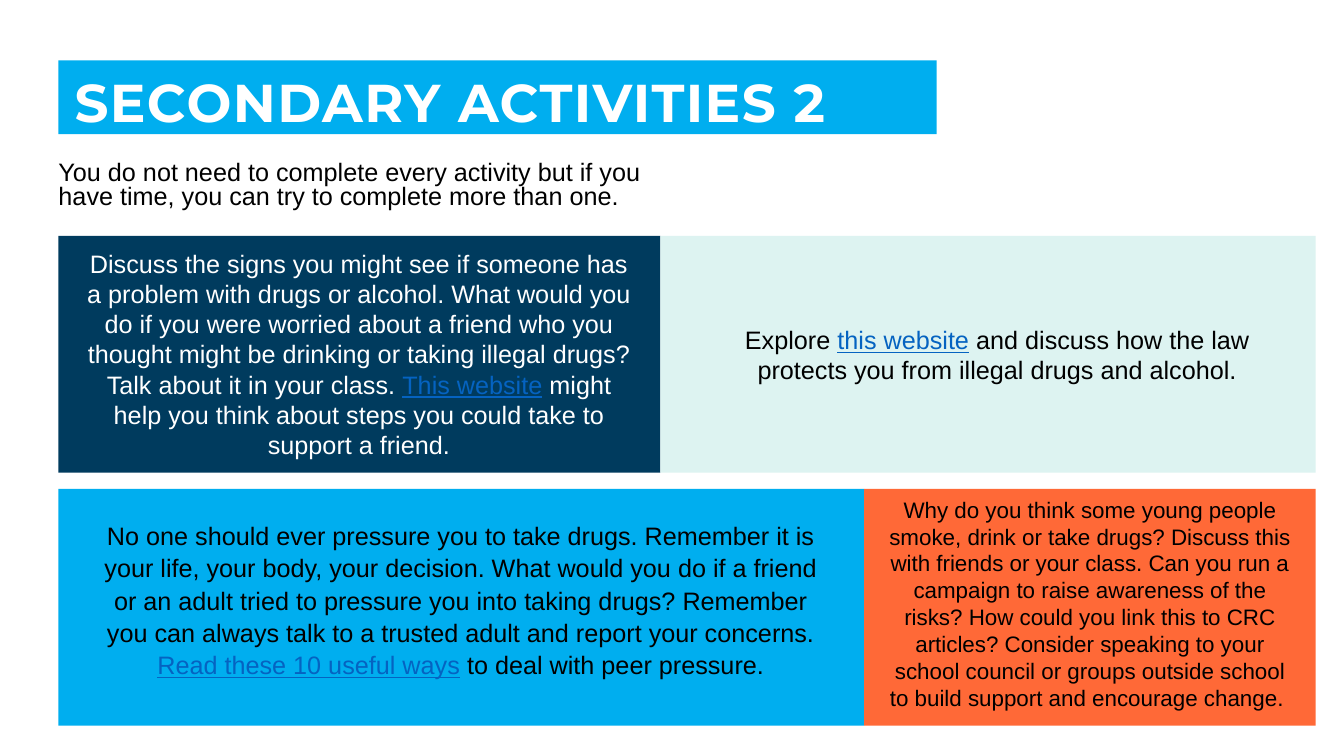
from pptx import Presentation, util as u
from pptx.dml.color import RGBColor
from pptx.enum import shapes, text

BLACK = RGBColor(0, 0, 0)
WHITE = RGBColor(0xFF, 0xFF, 0xFF)
NAVY = RGBColor(0x00, 0x3B, 0x5E)
SKY = RGBColor(0x00, 0xAE, 0xEF)
MINT = RGBColor(0xDD, 0xF3, 0xF1)
ORANGE = RGBColor(0xFF, 0x69, 0x37)
LINK = RGBColor(0x05, 0x63, 0xC1)

TITLE = "SECONDARY ACTIVITIES 2"
INTRO = ("You do not need to complete every activity but if you have time, "
         "you can try to complete more than one.")
ACTIVITIES = [
    dict(row=0, width=5.97, fill=NAVY, color=WHITE, size=18, box=(0.12, 0.07, 5.72, 2.22),
         parts=["Discuss the signs you might see if someone has a problem with drugs or alcohol. "
                "What would you do if you were worried about a friend who you thought might be "
                "drinking or taking illegal drugs? Talk about it in your class. ",
                "This website",
                " might help you think about steps you could take to support a friend."]),
    dict(row=0, width=6.5, fill=MINT, color=BLACK, size=18, box=(0.39, 0.83, 5.9, 0.71),
         parts=["Explore ", "this website",
                " and discuss how the law protects you from illegal drugs and alcohol."]),
    dict(row=1, width=7.99, fill=SKY, color=BLACK, size=18, box=(0.24, 0.24, 7.5, 1.71),
         spacing=1.07,
         parts=["No one should ever pressure you to take drugs. Remember it is your life, your body, "
                "your decision. What would you do if a friend or an adult tried to pressure you into "
                "taking drugs? Remember you can always talk to a trusted adult and report your "
                "concerns. ",
                "Read these 10 useful ways", " to deal with peer pressure."]),
    dict(row=1, width=4.48, fill=ORANGE, color=BLACK, size=16, box=(0.12, 0.02, 4.24, 2.26),
         parts=["Why do you think some young people smoke, drink or take drugs? Discuss this with "
                "friends or your class. Can you run a campaign to raise awareness of the risks? "
                "How could you link this to CRC articles? Consider speaking to your school council "
                "or groups outside school to build support and encourage change.\u00a0"]),
]

LEFT, TOP, CARD_H, GAP = 0.58, 2.34, 2.35, 0.16


def inches(*values):
    return [u.Inches(v) for v in values]


def style(r, size, color, name="Arial"):
    r.font.name = name
    r.font.size = u.Pt(size)
    r.font.color.rgb = color


def set_frame(tf, margins, anchor=text.MSO_ANCHOR.TOP):
    tf.word_wrap = True
    tf.auto_size = text.MSO_AUTO_SIZE.NONE
    tf.vertical_anchor = anchor
    tf.margin_left, tf.margin_top, tf.margin_right, tf.margin_bottom = inches(*margins)


def add_title(s):
    sp = s.shapes.title
    sp.left, sp.top, sp.width, sp.height = inches(LEFT, 0.6, 8.71, 0.73)
    sp.fill.solid()
    sp.fill.fore_color.rgb = SKY
    tf = sp.text_frame
    tf.text = TITLE
    set_frame(tf, (0.16, 0.16, 0.12, 0), text.MSO_ANCHOR.MIDDLE)
    p = tf.paragraphs[0]
    p.alignment = text.PP_ALIGN.LEFT
    p.line_spacing = 0.9
    r = p.runs[0]
    style(r, 38, WHITE, "Montserrat")
    r.font.bold = True
    r.font._element.set("spc", "100")


def add_intro(s):
    tf = s.shapes.add_textbox(*inches(LEFT, 1.56, 6.21, 0.62)).text_frame
    tf.text = INTRO
    set_frame(tf, (0, 0.05, 0.1, 0.05))
    p = tf.paragraphs[0]
    p.line_spacing = 0.8
    style(p.runs[0], 18, BLACK)


def add_activity(s, item, x, y):
    sp = s.shapes.add_shape(shapes.MSO_SHAPE.RECTANGLE, *inches(x, y, item["width"], CARD_H))
    sp.shadow.inherit = False
    sp.fill.solid()
    sp.fill.fore_color.rgb = item["fill"]
    sp.line.fill.background()

    dx, dy, w, h = item["box"]
    tf = s.shapes.add_textbox(*inches(x + dx, y + dy, w, h)).text_frame
    set_frame(tf, (0.1, 0.05, 0.1, 0.05))
    p = tf.paragraphs[0]
    p.alignment = text.PP_ALIGN.CENTER
    p.line_spacing = item.get("spacing", 1.0)
    for i, part in enumerate(item["parts"]):
        is_link = i == 1
        r = p.add_run()
        r.text = part
        style(r, item["size"], LINK if is_link else item["color"])
        r.font.underline = is_link


def main():
    prs = Presentation()
    prs.slide_width, prs.slide_height = inches(13.33, 7.5)
    s = prs.slides.add_slide(prs.slide_layouts[5])
    add_title(s)
    add_intro(s)
    row_x = [LEFT, LEFT]
    for item in ACTIVITIES:
        row = item["row"]
        add_activity(s, item, row_x[row], TOP + row * (CARD_H + GAP))
        row_x[row] += item["width"]
    prs.save("out.pptx")


if __name__ == "__main__":
    main()
